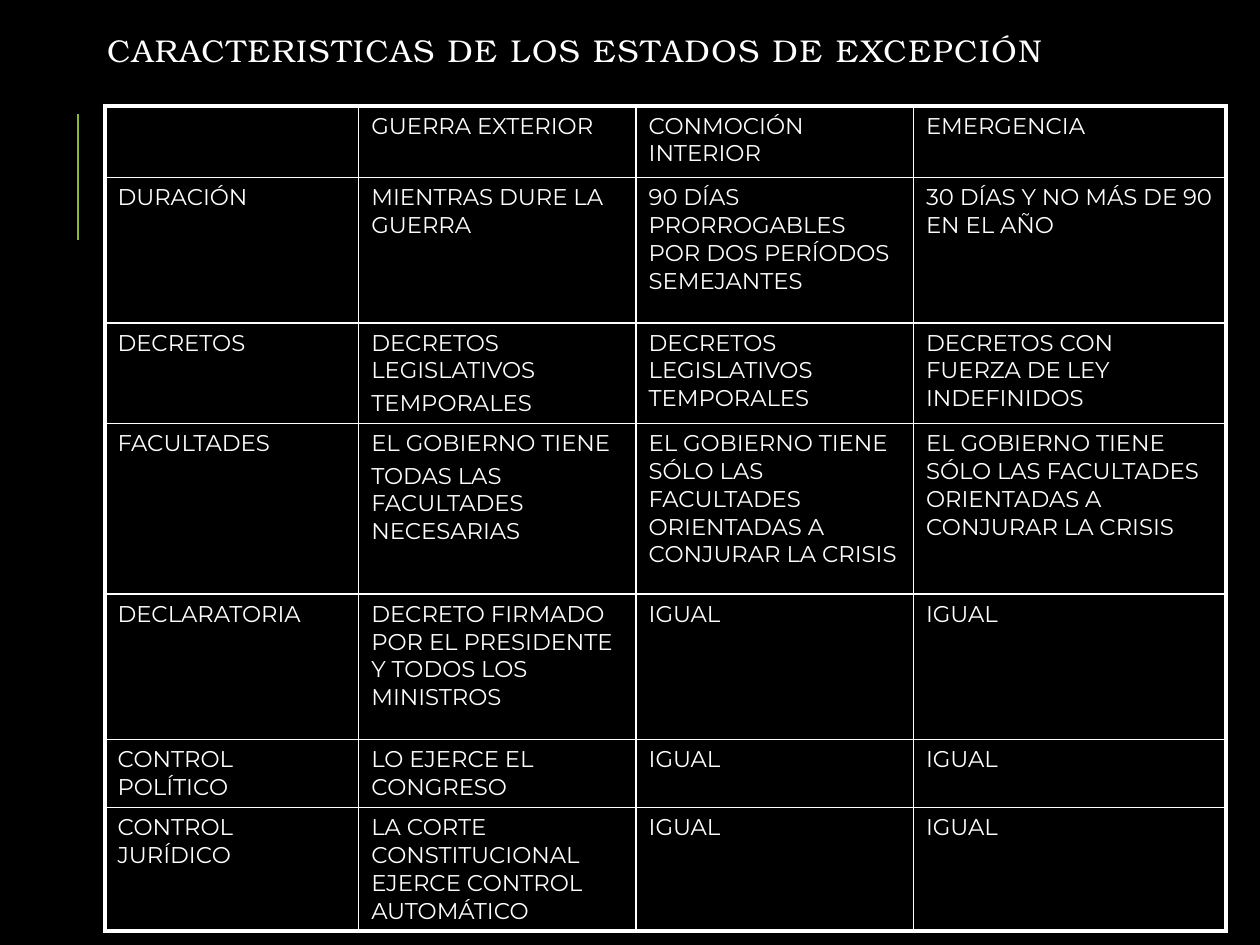
from lxml.etree import SubElement as Sub
from pptx import Presentation
from pptx.dml.color import RGBColor as RGB
from pptx.enum.shapes import MSO_CONNECTOR as LINE
from pptx.enum.text import MSO_ANCHOR as ANCHOR, MSO_AUTO_SIZE as AUTO, PP_ALIGN as ALIGN
from pptx.oxml.ns import qn
from pptx.util import Pt

WHITE, BLACK, GREEN = "FFFFFF", "000000", "8AB833"


def paint(item, color):
    if hasattr(item, "solid"):
        item.solid()
        item = item.fore_color
    item.rgb = RGB.from_string(color)


def edge(cell, side, width):
    line = Sub(cell._tc.get_or_add_tcPr(), qn("a:ln" + side), w=str(Pt(width)))
    fill = Sub(line, qn("a:solidFill"))
    Sub(fill, qn("a:srgbClr"), val=WHITE)


deck = Presentation()
deck.slide_width, deck.slide_height = Pt(720), Pt(540)
slide = deck.slides.add_slide(deck.slide_layouts[5])
paint(slide.background.fill, BLACK)

bar = slide.shapes.add_connector(LINE.STRAIGHT, Pt(44.5), Pt(137), Pt(44.5), Pt(65))
paint(bar.line.fill, GREEN)
bar.line.width = Pt(1.5)
Sub(bar._element.spPr, qn("a:effectLst"))

title = slide.shapes.title
title.left, title.top, title.width, title.height = Pt(54), Pt(24), Pt(612), Pt(13.5)
frame = title.text_frame
frame.text = "CARACTERISTICAS DE LOS ESTADOS DE EXCEPCIÓN"
frame.word_wrap = True
frame.auto_size = AUTO.NONE
frame.vertical_anchor = ANCHOR.MIDDLE
para = frame.paragraphs[0]
para.alignment = ALIGN.LEFT
para.line_spacing = 0.8
font = para.runs[0].font
font.name, font.size = "TeX Gyre Bonum", Pt(18)
paint(font.fill, WHITE)
font._element.set("spc", "100")

crisis = "EL GOBIERNO TIENE SÓLO LAS FACULTADES ORIENTADAS A CONJURAR LA CRISIS"
rows = [
    ("", "GUERRA EXTERIOR", "CONMOCIÓN INTERIOR", "EMERGENCIA"),
    ("DURACIÓN", "MIENTRAS DURE LA GUERRA",
     "90 DÍAS PRORROGABLES POR DOS PERÍODOS SEMEJANTES",
     "30 DÍAS Y NO MÁS DE 90 EN EL AÑO"),
    ("DECRETOS", "DECRETOS LEGISLATIVOS\nTEMPORALES",
     "DECRETOS LEGISLATIVOS TEMPORALES",
     "DECRETOS CON FUERZA DE LEY INDEFINIDOS"),
    ("FACULTADES", "EL GOBIERNO TIENE\nTODAS LAS FACULTADES NECESARIAS", crisis, crisis),
    ("DECLARATORIA", "DECRETO FIRMADO POR EL PRESIDENTE Y TODOS LOS MINISTROS",
     "IGUAL", "IGUAL"),
    ("CONTROL POLÍTICO", "LO EJERCE EL CONGRESO", "IGUAL", "IGUAL"),
    ("CONTROL JURÍDICO", "LA CORTE CONSTITUCIONAL EJERCE CONTROL AUTOMÁTICO",
     "IGUAL", "IGUAL"),
]
widths = [145, 158.5, 158.5, 178.5]
heights = [41, 83, 57.5, 97.5, 83, 39, 70.5]

table = slide.shapes.add_table(len(rows), len(widths), Pt(60), Pt(60.5),
                               Pt(sum(widths)), Pt(sum(heights))).table
table.first_row = table.horz_banding = False
for col, width in zip(table.columns, widths):
    col.width = Pt(width)
for row, height in zip(table.rows, heights):
    row.height = Pt(height)

for r, row in enumerate(rows):
    for c, text in enumerate(row):
        cell = table.cell(r, c)
        outer = {"L": c == 0, "R": c == len(widths) - 1,
                 "T": r == 0, "B": r == len(rows) - 1}
        for side, thick in outer.items():
            edge(cell, side, 2.25 if thick else 1)
        cell.fill.background()
        cell.text_frame.text = text
        for n, para in enumerate(cell.text_frame.paragraphs):
            if n:
                para.space_before = Pt(2.6)
            for run in para.runs:
                run.font.name, run.font.size = "Montserrat", Pt(13)
                paint(run.font.fill, WHITE)

deck.save("out.pptx")
